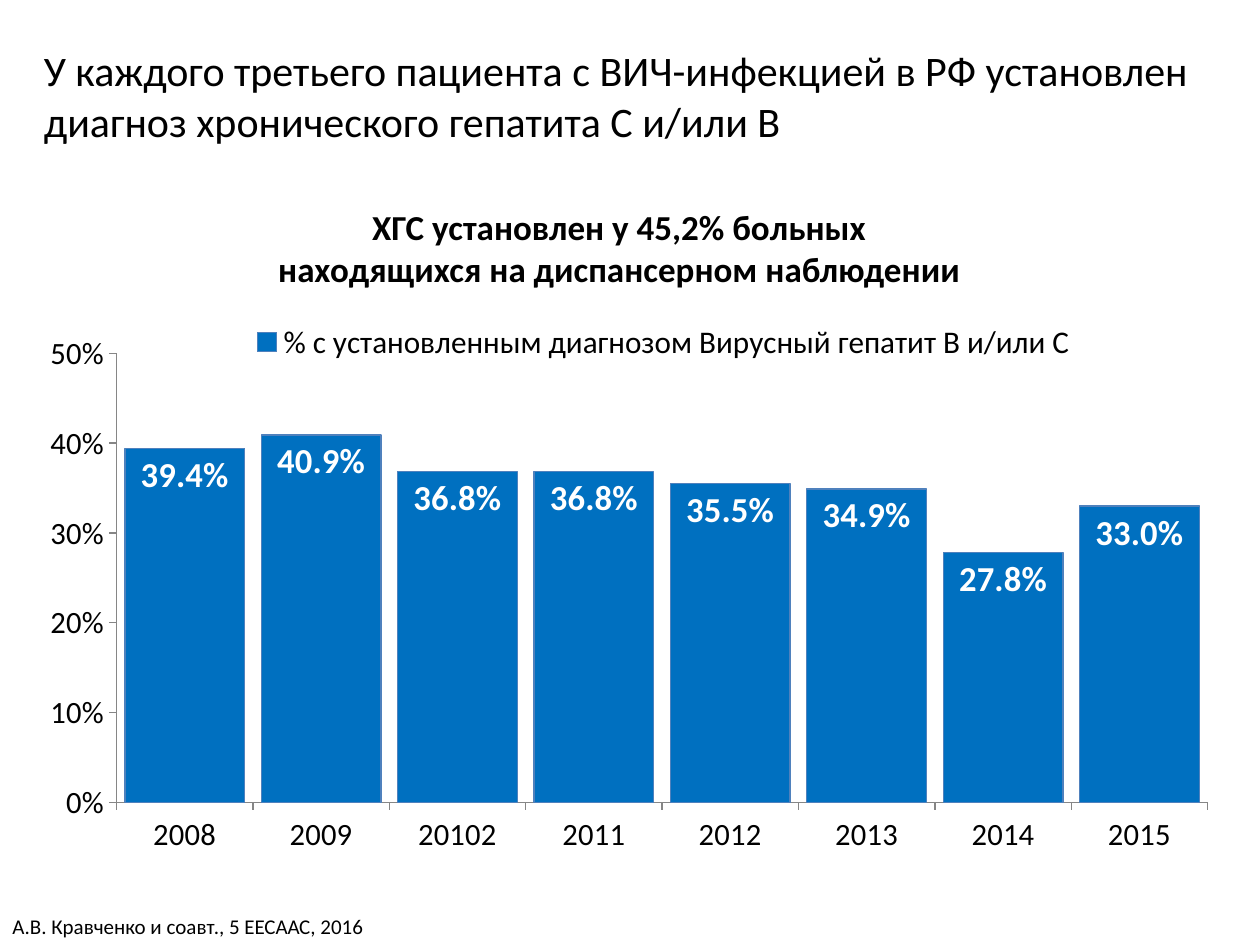
import pptx
import pptx.chart.data
import pptx.dml.color
import pptx.enum.chart
import pptx.enum.text
import pptx.oxml
import pptx.oxml.ns
import pptx.util

Inches = pptx.util.Inches
Pt = pptx.util.Pt
ALIGN = pptx.enum.text.PP_ALIGN
ANCHOR = pptx.enum.text.MSO_ANCHOR
FONT = "Calibri"
BLACK, WHITE, GREY = "000000", "FFFFFF", "868686"
BAR_FILL, BAR_LINE = "0070C0", "4F81BD"

TITLE = "У каждого третьего пациента с ВИЧ-инфекцией в РФ установлен диагноз хронического гепатита С и/или В"
SUBTITLE = ["ХГС установлен у 45,2% больных", "находящихся на диспансерном наблюдении"]
SOURCE = "А.В. Кравченко и соавт., 5 ЕЕСААС, 2016"
SERIES_NAME = "% с установленным диагнозом Вирусный гепатит В и/или С"
SHARES = {
    "2008": 0.394, "2009": 0.409, "20102": 0.368, "2011": 0.368,
    "2012": 0.355, "2013": 0.349, "2014": 0.278, "2015": 0.33,
}


def color(value):
    """Return the RGB colour for a hex string."""
    return pptx.dml.color.RGBColor.from_string(value)


def style_font(font, size, fill=BLACK, bold=False):
    """Set typeface, size, colour and weight."""
    font.name, font.size, font.bold = FONT, Pt(size), bold
    font.color.rgb = color(fill)


def add_text(page, box, lines, size, bold=False, align=ALIGN.LEFT, anchor=ANCHOR.TOP, wrap=True):
    """Place a text box with one paragraph for each line."""
    frame = page.shapes.add_textbox(*map(Inches, box)).text_frame
    frame.word_wrap = wrap
    frame.vertical_anchor = anchor
    for index, line in enumerate(lines):
        para = frame.add_paragraph() if index else frame.paragraphs[0]
        para.alignment = align
        span = para.add_run()
        span.text = line
        style_font(span.font, size, bold=bold)


def set_layout(element, box, inner=False):
    """Fix a chart part at a box given in fractions of the chart."""
    target = '<c:layoutTarget val="inner"/>' if inner else ""
    modes = "".join(f'<c:{side}Mode val="edge"/>' for side in "xy")
    sizes = "".join(f'<c:{key} val="{value}"/>' for key, value in zip("xywh", box))
    layout = pptx.oxml.parse_xml(
        f'<c:layout {pptx.oxml.ns.nsdecls("c")}><c:manualLayout>'
        f"{target}{modes}{sizes}</c:manualLayout></c:layout>"
    )
    for old in element.findall(pptx.oxml.ns.qn("c:layout")):
        element.remove(old)
    position = element.find(pptx.oxml.ns.qn("c:legendPos"))
    if position is None:
        element.insert(0, layout)
    else:
        position.addnext(layout)


def style_axes(chart):
    """Set the scale, ticks and lines of both axes."""
    for axis in (chart.category_axis, chart.value_axis):
        axis.has_major_gridlines = False
        axis.major_tick_mark = pptx.enum.chart.XL_TICK_MARK.OUTSIDE
        axis.format.line.color.rgb = color(GREY)
        axis.format.line.width = Pt(0.75)
        style_font(axis.tick_labels.font, 17.7)
    scale = chart.value_axis
    scale.minimum_scale, scale.maximum_scale, scale.major_unit = 0, 0.5, 0.1
    scale.tick_labels.number_format = "0%"
    scale.tick_labels.number_format_is_linked = False


def style_bars(plot):
    """Set the fill, outline, gap and labels of the bars."""
    plot.gap_width, plot.overlap, plot.vary_by_categories = 14, 100, False
    series = plot.series[0]
    series.format.fill.solid()
    series.format.fill.fore_color.rgb = color(BAR_FILL)
    series.format.line.color.rgb = color(BAR_LINE)
    series.format.line.width = Pt(0.75)
    labels = series.data_labels
    labels.show_value = True
    labels.number_format, labels.number_format_is_linked = "0.0%", False
    labels.position = pptx.enum.chart.XL_LABEL_POSITION.INSIDE_END
    style_font(labels.font, 20, WHITE, bold=True)


def add_share_chart(page, box):
    """Place the column chart of yearly shares."""
    data = pptx.chart.data.CategoryChartData(number_format="0.0%")
    data.categories = list(SHARES)
    data.add_series(SERIES_NAME, list(SHARES.values()))
    kind = pptx.enum.chart.XL_CHART_TYPE.COLUMN_STACKED
    chart = page.shapes.add_chart(kind, *map(Inches, box), data).chart
    chart.has_title = False
    style_font(chart.font, 17.7)
    style_axes(chart)
    style_bars(chart.plots[0])
    chart.has_legend = True
    legend = chart.legend
    legend.position = pptx.enum.chart.XL_LEGEND_POSITION.BOTTOM
    legend.include_in_layout = True
    style_font(legend.font, 18)
    set_layout(legend._element, (0.16, 0.04, 0.73, 0.09))
    plot_area = chart._chartSpace.chart.plotArea
    set_layout(plot_area, (0.073, 0.104, 0.953 - 0.0, 0.784), inner=True)


def main():
    """Build the slide and save it."""
    deck = pptx.Presentation()
    deck.slide_width, deck.slide_height = Inches(10), Inches(7.5)
    page = deck.slides.add_slide(deck.slide_layouts[6])
    add_share_chart(page, (0.4, 2.33, 9.19, 4.55))
    add_text(page, (0.25, 1.58, 9.33, 0.77), SUBTITLE, 20, bold=True, align=ALIGN.CENTER)
    add_text(page, (0, 7.2, 3.02, 0.3), [SOURCE], 12, wrap=False)
    add_text(page, (0.25, 0.13, 9.33, 1.25), [TITLE], 24, anchor=ANCHOR.MIDDLE)
    deck.save("out.pptx")


if __name__ == "__main__":
    main()
